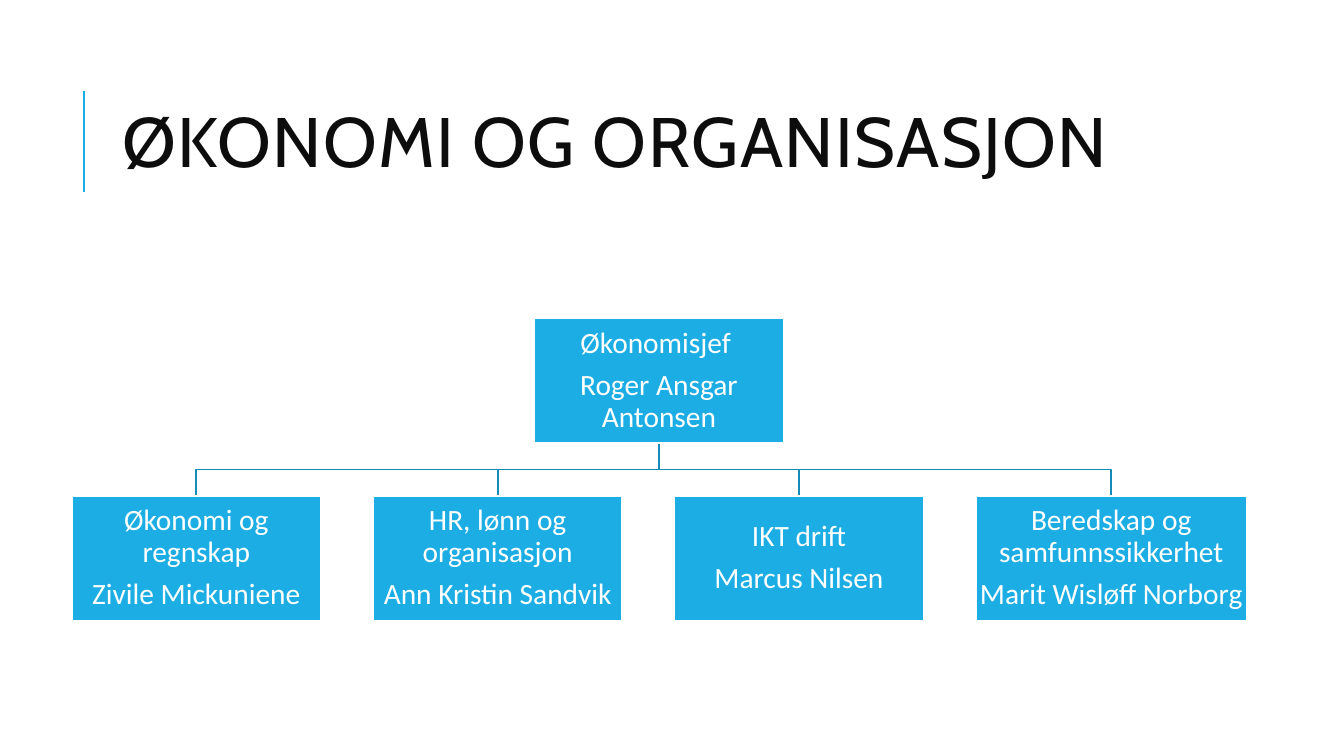
from pptx import Presentation
from pptx.dml.color import RGBColor as RGB
from pptx.enum.shapes import MSO_CONNECTOR as LINK, MSO_SHAPE as SHAPE
from pptx.enum.text import MSO_ANCHOR as ANCHOR, PP_ALIGN as ALIGN
from pptx.oxml.ns import qn
from pptx.util import Pt
from lxml.etree import SubElement

HUES = {"box": "1CADE4", "branch": "168BB7", "white": "FFFFFF", "title": "0D0D0D"}

# Org chart layout
HIGH, WIDE, WIDER = 89, 178.1, 193.6
LEFT, STEP = 51.2, 215.25
TOP, ROW = 227.5, 354.3
HEAD = 381.6

CHIEF = ["Økonomisjef ", "Roger Ansgar Antonsen"]
UNITS = [
    (["Økonomi og regnskap", "Zivile Mickuniene"], WIDE),
    (["HR, lønn og organisasjon", "Ann Kristin Sandvik"], WIDE),
    (["IKT drift", "Marcus Nilsen"], WIDE),
    (["Beredskap og samfunnssikkerhet", "Marit Wisløff Norborg "], WIDER),
]


def color(name):
    return RGB.from_string(HUES[name])


def apply(target, style):
    for key, value in style.items():
        setattr(target, key, value)


def stroke(line, name, width):
    line.color.rgb = color(name)
    line.width = Pt(width)


def write(frame, texts, inset, font, para, hue):
    """Fill a text frame with one paragraph per text."""
    apply(frame, {"word_wrap": True, "vertical_anchor": ANCHOR.MIDDLE})
    apply(frame, {f"margin_{side}": Pt(pad) for side, pad in inset.items()})
    for i, text in enumerate(texts):
        item = frame.paragraphs[0] if i == 0 else frame.add_paragraph()
        apply(item, para)
        run = item.add_run()
        run.text = text
        apply(run.font, font)
        run.font.color.rgb = color(hue)


def title(slide, text):
    box = slide.shapes.add_textbox(Pt(80.6), Pt(46), Pt(765.4), Pt(118))
    write(box.text_frame, [text], {"left": 7.2, "right": 7.2},
          {"name": "Cabin", "size": Pt(50)}, {"line_spacing": 0.8}, "title")
    # Letter spacing of one point
    run = box.text_frame.paragraphs[0].runs[0]
    run.font._element.set("spc", "100")


def accent(slide):
    line = slide.shapes.add_connector(
        LINK.STRAIGHT, Pt(60), Pt(136.8), Pt(60), Pt(64.8))
    stroke(line.line, "box", 1.5)
    SubElement(line._element.spPr, qn("a:effectLst"))


def branch(slide, start, end):
    """Draw an elbow from the chief down to one unit."""
    low, mid = TOP + HIGH, (TOP + HIGH + ROW) / 2
    path = slide.shapes.build_freeform(Pt(start), Pt(low))
    points = [(start, mid), (end, mid), (end, ROW)]
    path.add_line_segments([(Pt(x), Pt(y)) for x, y in points], close=False)
    elbow = path.convert_to_shape()
    elbow.shadow.inherit = False
    elbow.fill.background()
    stroke(elbow.line, "branch", 1.25)


def card(slide, left, top, wide, texts):
    box = slide.shapes.add_shape(
        SHAPE.RECTANGLE, Pt(left), Pt(top), Pt(wide), Pt(HIGH))
    box.shadow.inherit = False
    box.fill.solid()
    box.fill.fore_color.rgb = color("box")
    stroke(box.line, "white", 1.25)
    write(box.text_frame, texts,
          dict.fromkeys(("left", "top", "right", "bottom"), 1),
          {"name": "Calibri", "size": Pt(21)},
          {"alignment": ALIGN.CENTER, "line_spacing": 0.9,
           "space_after": Pt(7.35)}, "white")


def main():
    deck = Presentation()
    apply(deck, {"slide_width": Pt(960), "slide_height": Pt(540)})
    slide = deck.slides.add_slide(deck.slide_layouts[6])

    # Heading
    accent(slide)
    title(slide, "ØKONOMI OG ORGANISASJON")

    # Branches lie behind the cards
    for i, (_, wide) in enumerate(UNITS):
        branch(slide, HEAD + WIDE / 2, LEFT + i * STEP + wide / 2)

    # Chief and units
    card(slide, HEAD, TOP, WIDE, CHIEF)
    for i, (texts, wide) in enumerate(UNITS):
        card(slide, LEFT + i * STEP, ROW, wide, texts)

    deck.save("out.pptx")


if __name__ == "__main__":
    main()
